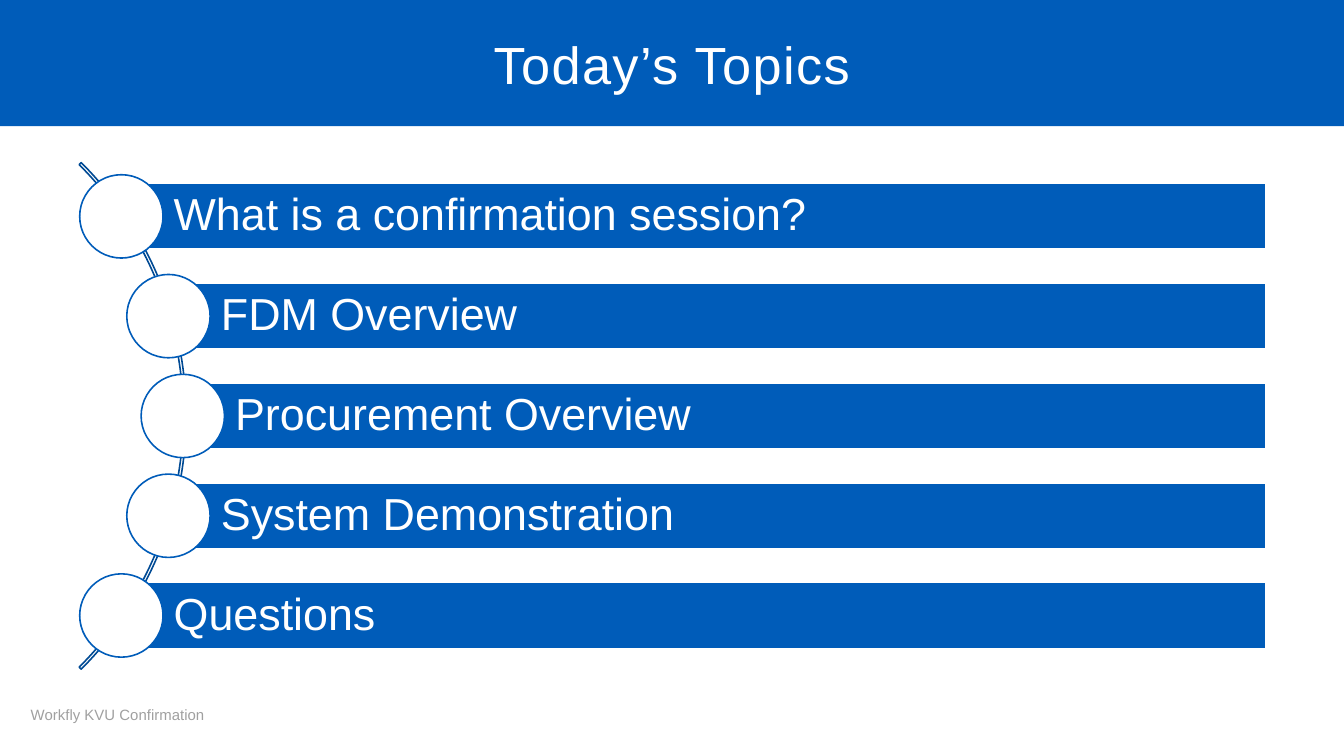
import math

import pptx
import pptx.dml.color
import pptx.enum.shapes
import pptx.enum.text
import pptx.util
from pptx.util import Inches

SHAPE = pptx.enum.shapes.MSO_SHAPE
ALIGN = pptx.enum.text.PP_ALIGN
BLUE, DARK_BLUE, WHITE, GREY = "005CB9", "004A94", "FFFFFF", "A0A0A0"
TOPICS = [
    "What is a confirmation session?",
    "FDM Overview",
    "Procurement Overview",
    "System Demonstration",
    "Questions",
]


def rgb(color):
    return pptx.dml.color.RGBColor.from_string(color)


def add_flat_shape(shapes, kind, box, fill=None, line=None):
    shape = shapes.add_shape(kind, *map(Inches, box))
    shape.shadow.inherit = False
    if fill:
        shape.fill.solid()
        shape.fill.fore_color.rgb = rgb(fill)
    else:
        shape.fill.background()
    if line:
        shape.line.color.rgb = rgb(line)
        shape.line.width = pptx.util.Pt(0.85)
    else:
        shape.line.fill.background()
    return shape


def write_line(shape, text, size, color, align=ALIGN.LEFT):
    frame = shape.text_frame
    frame.word_wrap = True
    frame.vertical_anchor = pptx.enum.text.MSO_ANCHOR.MIDDLE
    paragraph = frame.paragraphs[0]
    paragraph.text = text
    paragraph.alignment = align
    paragraph.font.name = "Arial"
    paragraph.font.size = pptx.util.Pt(size)
    paragraph.font.color.rgb = rgb(color)
    return paragraph


def add_title_band(shapes, box, text):
    band = add_flat_shape(shapes, SHAPE.RECTANGLE, box, BLUE)
    title = write_line(band, text, 28, WHITE, ALIGN.CENTER)
    title.runs[0].font._element.set("spc", "80")


def add_footer(shapes, box, text):
    write_line(shapes.add_textbox(*map(Inches, box)), text, 8, GREY)


def add_topic(shapes, box, text, diameter):
    """Draw a bar with a circle centred on its left edge."""
    left, top, width, height = box
    bar = add_flat_shape(shapes, SHAPE.RECTANGLE, box, BLUE, WHITE)
    frame = bar.text_frame
    frame.margin_left = Inches(0.39)
    frame.margin_top = frame.margin_right = frame.margin_bottom = Inches(0.07)
    write_line(bar, text, 24, WHITE).line_spacing = 0.9
    circle_box = (left - diameter / 2, top + (height - diameter) / 2, diameter, diameter)
    add_flat_shape(shapes, SHAPE.OVAL, circle_box, WHITE, BLUE)


def add_topic_arc(shapes, box, topics):
    """Spread the topics evenly down an arc that bulges to the right."""
    left, top, width, height = box
    arc_size, bar_height, diameter = 5.33, 0.49, 0.62
    track_radius = 2.64
    center_x, center_y = left - 1.87, top + height / 2

    arc_box = (center_x - arc_size / 2, center_y - arc_size / 2, arc_size, arc_size)
    arc = add_flat_shape(shapes, SHAPE.BLOCK_ARC, arc_box, line=DARK_BLUE)
    for index, value in enumerate((189, 27, 0.004)):  # 315 deg, 45 deg, thickness
        arc.adjustments[index] = value

    pitch = (height - diameter) / (len(topics) - 1)
    for index, topic in enumerate(topics):
        offset = (index - (len(topics) - 1) / 2) * pitch
        bar_left = center_x + math.sqrt(track_radius**2 - offset**2)
        bar_top = center_y + offset - bar_height / 2
        bar_box = (bar_left, bar_top, left + width - bar_left, bar_height)
        add_topic(shapes, bar_box, topic, diameter)


def main():
    deck = pptx.Presentation()
    deck.slide_width = Inches(10)
    deck.slide_height = deck.slide_width * 9 // 16
    shapes = deck.slides.add_slide(deck.slide_layouts[6]).shapes
    add_title_band(shapes, (0, 0, 10, 0.94), "Today’s Topics")
    add_footer(shapes, (0.13, 5.17, 3.38, 0.3), "Workfly KVU Confirmation")
    add_topic_arc(shapes, (0.59, 1.3, 8.83, 3.59), TOPICS)
    deck.save("out.pptx")


if __name__ == "__main__":
    main()
